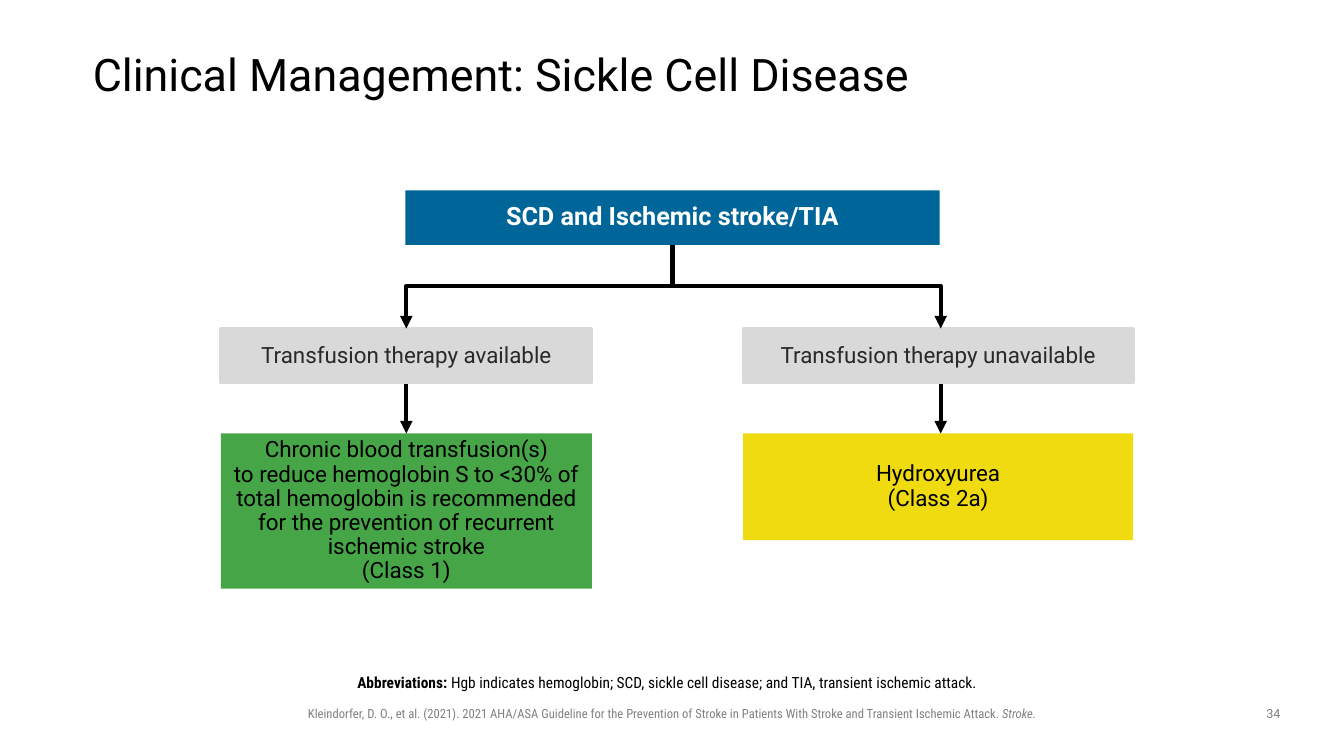
import dataclasses

import pptx
import pptx.dml.color
import pptx.enum.shapes
import pptx.enum.text
import pptx.oxml
import pptx.oxml.ns
import pptx.util
from pptx.util import Inches

ALIGN = pptx.enum.text.PP_ALIGN
ANCHOR = pptx.enum.text.MSO_ANCHOR


@dataclasses.dataclass(frozen=True)
class Theme:
    font: str = "Roboto"
    condensed: str = "Roboto Condensed"
    black: str = "000000"
    white: str = "FFFFFF"
    dark: str = "292929"
    muted: str = "808080"
    blue: str = "006699"
    gray: str = "D9D9D9"
    green: str = "46A547"
    yellow: str = "F0DB10"
    title_size: int = 32
    start_size: int = 18
    step_size: int = 16
    note_size: int = 11
    footer_size: int = 9
    arrow_width: int = 3
    border_width: int = 2


THEME = Theme()


def color(value):
    return pptx.dml.color.RGBColor.from_string(value)


def set_values(target, values):
    for name, value in values.items():
        setattr(target, name, value)


def place(shape, left, top, width, height):
    sides = {"left": left, "top": top, "width": width, "height": height}
    set_values(shape, {name: Inches(value) for name, value in sides.items()})


def set_frame(frame, margins, anchor=ANCHOR.TOP):
    names = ("margin_left", "margin_top", "margin_right", "margin_bottom")
    set_values(frame, {name: Inches(value) for name, value in zip(names, margins)})
    set_values(frame, {
        "word_wrap": True,
        "auto_size": pptx.enum.text.MSO_AUTO_SIZE.NONE,
        "vertical_anchor": anchor,
    })


def write_para(para, spans, size, ink, font=THEME.font, align=ALIGN.CENTER, spacing=0.9):
    """Each span is a text and a dict of font values."""
    set_values(para, {"alignment": align, "line_spacing": spacing,
                      "space_before": pptx.util.Pt(0)})
    for text, extra in spans:
        span = para.add_run()
        span.text = text
        set_values(span.font, {"name": font, "size": pptx.util.Pt(size), **extra})
        span.font.color.rgb = color(ink)


def add_box(page, bounds, lines, fill, ink, size=THEME.step_size, bold=False, border=None):
    box = page.shapes.add_shape(pptx.enum.shapes.MSO_SHAPE.RECTANGLE,
                                *map(Inches, bounds))
    box.shadow.inherit = False
    box.fill.solid()
    box.fill.fore_color.rgb = color(fill)
    if border:
        box.line.color.rgb = color(border)
        box.line.width = pptx.util.Pt(THEME.border_width)
    else:
        box.line.fill.background()
    frame = box.text_frame
    set_frame(frame, (0, 0, 0, 0), ANCHOR.MIDDLE)
    for index, line in enumerate(lines):
        para = frame.add_paragraph() if index else frame.paragraphs[0]
        write_para(para, [(line, {"bold": bold})], size, ink)


def style_arrow(arrow):
    arrow.line.color.rgb = color(THEME.black)
    arrow.line.width = pptx.util.Pt(THEME.arrow_width)
    tail = pptx.oxml.parse_xml(
        f'<a:tailEnd {pptx.oxml.ns.nsdecls("a")} type="triangle"/>')
    arrow.line._get_or_add_ln().append(tail)


def add_arrow(page, x, top, bottom):
    arrow = page.shapes.add_connector(pptx.enum.shapes.MSO_CONNECTOR.STRAIGHT,
                                      Inches(x), Inches(top), Inches(x), Inches(bottom))
    style_arrow(arrow)
    arrow._element.spPr.append(
        pptx.oxml.parse_xml(f'<a:effectLst {pptx.oxml.ns.nsdecls("a")}/>'))


def add_branch(page, points):
    start, *others = [(Inches(x), Inches(y)) for x, y in points]
    builder = page.shapes.build_freeform(*start)
    builder.add_line_segments(others, close=False)
    branch = builder.convert_to_shape()
    branch.shadow.inherit = False
    branch.fill.background()
    style_arrow(branch)


def add_footer(page, bounds, spans, font):
    box = page.shapes.add_textbox(*map(Inches, bounds))
    set_frame(box.text_frame, (0.1, 0.05, 0.1, 0.05))
    write_para(box.text_frame.paragraphs[0], spans, THEME.footer_size,
               THEME.muted, font, spacing=1.0)


def fill_title(page, text):
    title = page.shapes.title
    place(title, 0.92, 0.4, 11.5, 0.72)
    set_frame(title.text_frame, (0, 0, 0, 0), ANCHOR.MIDDLE)
    write_para(title.text_frame.paragraphs[0], [(text, {})], THEME.title_size,
               THEME.black, align=ALIGN.LEFT)


def fill_abbreviations(page, spans):
    body = page.placeholders[1]
    place(body, 0.92, 6.65, 11.5, 0.3)
    set_frame(body.text_frame, (0, 0.05, 0.1, 0.05))
    para = body.text_frame.paragraphs[0]
    properties = para._p.get_or_add_pPr()
    properties.set("marL", str(Inches(0.25)))
    properties.set("indent", str(Inches(-0.25)))
    properties.append(pptx.oxml.parse_xml(f'<a:buNone {pptx.oxml.ns.nsdecls("a")}/>'))
    write_para(para, spans, THEME.note_size, THEME.black, THEME.condensed)


def main():
    deck = pptx.Presentation()
    set_values(deck, {"slide_width": Inches(13.33), "slide_height": Inches(7.5)})
    page = deck.slides.add_slide(deck.slide_layouts[1])

    # Title and abbreviations
    fill_title(page, "Clinical Management: Sickle Cell Disease")
    fill_abbreviations(page, [
        ("Abbreviations: ", {"bold": True}),
        ("Hgb indicates hemoglobin; SCD, sickle cell disease; and TIA, "
         "transient ischemic attack.", {"bold": False}),
    ])

    # Starting condition
    add_box(page, (4.02, 1.89, 5.3, 0.54), ["SCD and Ischemic stroke/TIA"],
            THEME.blue, THEME.white, THEME.start_size, bold=True)

    # Two branches: left, width, arrow x, option, treatment, height, fill
    branches = [
        (2.19, 3.68, 4.03, "Transfusion therapy available",
         ["Chronic blood transfusion(s)",
          "to reduce hemoglobin S to <30% of total hemoglobin is recommended "
          "for the prevention of recurrent ischemic stroke",
          "(Class 1)"], 1.54, THEME.green),
        (7.37, 3.87, 9.33, "Transfusion therapy unavailable",
         ["Hydroxyurea", "(Class 2a)"], 1.06, THEME.yellow),
    ]
    stem, stem_top, fork, option_top, treatment_top = 6.67, 2.43, 2.84, 3.26, 4.3
    for left, width, x, option, treatment, height, fill in branches:
        add_box(page, (left, option_top, width, 0.54), [option],
                THEME.gray, THEME.dark, border=THEME.gray)
        add_box(page, (left, treatment_top, width, height), treatment,
                fill, THEME.black)
        add_branch(page, [(stem, stem_top), (stem, fork), (x, fork), (x, option_top)])
        add_arrow(page, x, 3.81, treatment_top)

    # Citation and page number
    add_footer(page, (2.94, 6.95, 7.45, 0.25), [
        ("Kleindorfer, D. O., et al. (2021). 2021 AHA/ASA Guideline for the Prevention "
         "of Stroke in Patients With Stroke and Transient Ischemic Attack. ", {}),
        ("Stroke.", {"italic": True}),
    ], THEME.condensed)
    add_footer(page, (12.42, 6.95, 0.42, 0.26), [("34", {})], THEME.font)

    deck.save("out.pptx")


if __name__ == "__main__":
    main()
